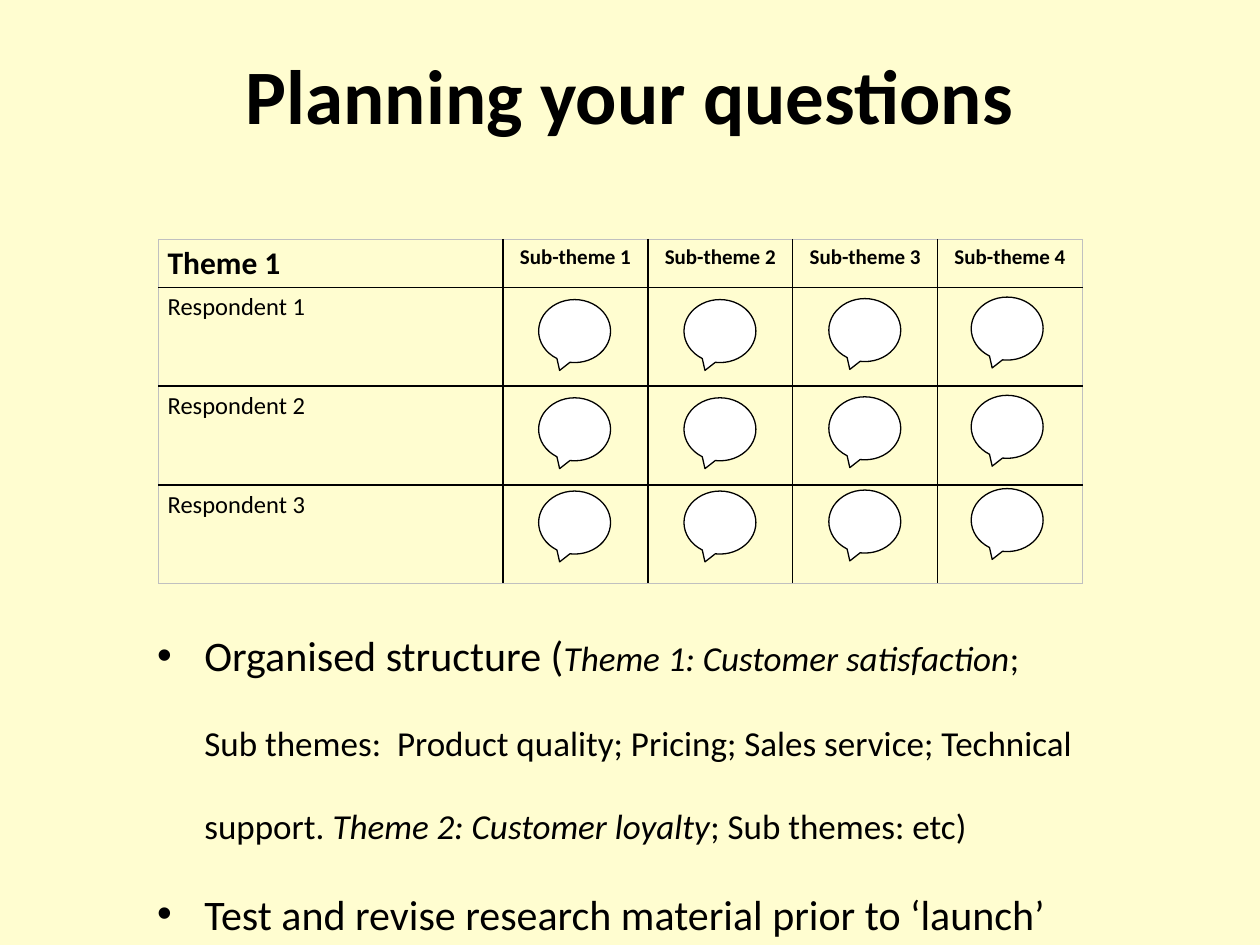
from lxml import etree
from pptx import Presentation, util as u
from pptx.dml.color import RGBColor
from pptx.enum import shapes, text
from pptx.oxml import ns

CREAM = RGBColor(0xFF, 0xFD, 0xD0)
BLACK = RGBColor(0, 0, 0)
WHITE = RGBColor(0xFF, 0xFF, 0xFF)
GREY = RGBColor(0xC0, 0xC0, 0xC0)
FONT = "Calibri"
HANG = u.Cm(0.95)


def write(p, words, size, bold=False, italic=False, align=None):
    if align is not None:
        p.alignment = align
    r = p.add_run()
    r.text = words
    r.font.name, r.font.size = FONT, u.Pt(size)
    r.font.bold, r.font.italic = bold, italic
    r.font.color.rgb = BLACK


def add_xml(parent, tag, **attrs):
    return etree.SubElement(parent, ns.qn(tag), attrs)


class Deck:
    def __init__(self):
        self.prs = Presentation()
        self.prs.slide_width, self.prs.slide_height = u.Cm(25.4), u.Cm(19.05)
        self.s = self.prs.slides.add_slide(self.prs.slide_layouts[5])
        self.s.background.fill.solid()
        self.s.background.fill.fore_color.rgb = CREAM

    def title(self, words, box):
        sp = self.s.shapes.title
        sp.left, sp.top, sp.width, sp.height = map(u.Cm, box)
        tf = sp.text_frame
        tf.vertical_anchor = text.MSO_ANCHOR.MIDDLE
        tf.paragraphs[0].line_spacing = 0.9
        write(tf.paragraphs[0], words, 44, bold=True, align=text.PP_ALIGN.CENTER)

    def borders(self, cell, outer):
        tc_pr = cell._tc.get_or_add_tcPr()
        for i, side in enumerate("LRTB"):
            color, width = (GREY, 0.25) if outer[side] else (BLACK, 1)
            ln = add_xml(tc_pr, f"a:ln{side}", w=str(u.Pt(width)))
            add_xml(add_xml(ln, "a:solidFill"), "a:srgbClr", val=str(color))
            tc_pr.insert(i, ln)

    def table(self, rows, left, top, widths, heights):
        n_rows, n_cols = len(heights), len(widths)
        frame = self.s.shapes.add_table(n_rows, n_cols, u.Cm(left), u.Cm(top),
                                        u.Cm(sum(widths)), u.Cm(sum(heights)))
        table = frame.table
        table.first_row = table.horz_banding = False
        for column, width in zip(table.columns, widths):
            column.width = u.Cm(width)
        for i, height in enumerate(heights):
            table.rows[i].height = u.Cm(height)
            for j in range(n_cols):
                cell = table.cell(i, j)
                cell.fill.background()
                cell.margin_left = cell.margin_right = u.Cm(0.19)
                cell.margin_top = cell.margin_bottom = u.Cm(0.1)
                self.borders(cell, {"L": j == 0, "R": j == n_cols - 1,
                                    "T": i == 0, "B": i == n_rows - 1})
                if j < len(rows[i]):
                    size = 14 if i else 12 if j else 18
                    align = text.PP_ALIGN.CENTER if j else text.PP_ALIGN.LEFT
                    write(cell.text_frame.paragraphs[0], rows[i][j], size,
                          bold=i == 0, align=align)

    def callouts(self, columns, tops, width, height):
        group = self.s.shapes.add_group_shape()
        for left, rise in columns:
            for top in tops:
                sp = group.shapes.add_shape(
                    shapes.MSO_SHAPE.OVAL_CALLOUT, u.Cm(left), u.Cm(top - rise),
                    u.Cm(width), u.Cm(height))
                sp.shadow.inherit = False
                sp.fill.solid()
                sp.fill.fore_color.rgb = WHITE
                sp.line.color.rgb = BLACK
                sp.line.width = u.Pt(0.75)

    def bullets(self, paragraphs, box):
        tf = self.s.shapes.add_textbox(*map(u.Cm, box)).text_frame
        tf.word_wrap = True
        for i, (bullet, runs) in enumerate(paragraphs):
            p = tf.paragraphs[0] if i == 0 else tf.add_paragraph()
            if i < len(paragraphs) - 1:
                p.space_after = u.Pt(23.6)
            p_pr = p._p.get_or_add_pPr()
            p_pr.set("marL", str(HANG))
            if bullet:
                p_pr.set("indent", str(-HANG))
                add_xml(p_pr, "a:buFont", typeface="Arial")
                add_xml(p_pr, "a:buChar", char="•")
            for words, size, italic in runs:
                write(p, words, size, italic=italic)


def main():
    deck = Deck()
    deck.title("Planning your questions", (1.75, 1.02, 21.9, 1.98))
    header = ["Theme 1"] + [f"Sub-theme {n}" for n in range(1, 5)]
    respondents = [[f"Respondent {n}"] for n in range(1, 4)]
    deck.table([header] + respondents, 3.19, 4.82,
               [6.95] + [2.92] * 4, [0.97] + [1.99] * 3)
    deck.callouts([(10.86, 0), (13.79, 0), (16.71, 0.02), (19.58, 0.05)],
                  (6.04, 8.02, 9.9), 1.45, 1.27)
    deck.bullets([
        (True, [("Organised structure (", 24, False),
                ("Theme 1: Customer satisfaction", 20, True),
                (";", 20, False)]),
        (False, [("Sub themes:  Product quality; Pricing; Sales service; Technical",
                  20, False)]),
        (False, [("support. ", 20, False),
                 ("Theme 2: Customer loyalty", 20, True),
                 ("; Sub themes: etc)", 20, False)]),
        (True, [("Test and revise research material prior to ‘launch’", 24, False)]),
    ], (2.92, 12.57, 21, 4.88))
    deck.prs.save("out.pptx")


if __name__ == "__main__":
    main()
